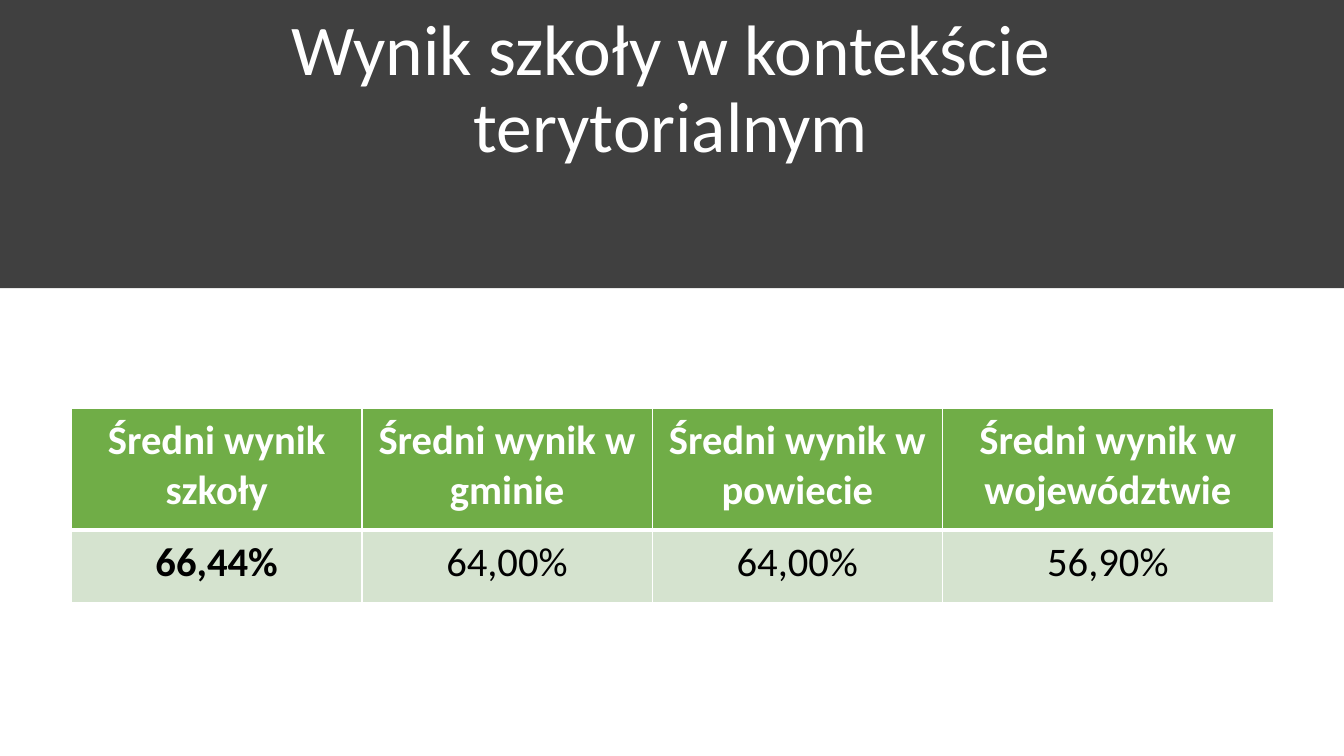
from lxml.etree import SubElement
from pptx import Presentation
from pptx.dml.color import RGBColor
from pptx.enum.shapes import MSO_SHAPE
from pptx.enum.text import MSO_ANCHOR, MSO_AUTO_SIZE, PP_ALIGN
from pptx.oxml.ns import qn
from pptx.util import Inches, Pt

COLOURS = {
    "band": "404040",
    "header": "70AD47",
    "result": "D5E3CF",
    "white": "FFFFFF",
    "black": "000000",
}
HEADINGS = [
    "Średni wynik szkoły",
    "Średni wynik w gminie",
    "Średni wynik w powiecie",
    "Średni wynik w województwie",
]
RESULTS = ["66,44%", "64,00%", "64,00%", "56,90%"]
COLUMN_WIDTHS = [2.88, 2.88, 2.88, 3.28]
ROW_HEIGHTS = [1.21, 0.72]


def colour(name):
    """Return the named colour of the palette."""
    return RGBColor.from_string(COLOURS[name])


def format_paragraph(paragraph, size, colour_name, bold=False):
    """Centre a paragraph and set its font."""
    paragraph.alignment = PP_ALIGN.CENTER
    font = paragraph.font
    font.name = "Calibri"
    font.size = Pt(size)
    font.bold = bold
    font.color.rgb = colour(colour_name)


def add_band(slide):
    """Place the dark band behind the title."""
    band = slide.shapes.add_shape(
        MSO_SHAPE.RECTANGLE, 0, 0, Inches(13.33), Inches(2.86)
    )
    band.shadow.inherit = False
    band.fill.solid()
    band.fill.fore_color.rgb = colour("band")
    band.line.fill.background()
    slide.shapes.element.insert(2, band.element)


def set_title(slide, text):
    """Fill and format the title placeholder."""
    title = slide.shapes.title
    title.left, title.top = Inches(0.77), Inches(0.4)
    title.width, title.height = Inches(11.77), Inches(1.32)
    frame = title.text_frame
    frame.text = text
    frame.word_wrap = True
    frame.auto_size = MSO_AUTO_SIZE.NONE
    frame.vertical_anchor = MSO_ANCHOR.BOTTOM
    frame.paragraphs[0].line_spacing = 0.9
    format_paragraph(frame.paragraphs[0], 51, "white")


def set_borders(cell, widths):
    """Draw white borders of the given widths around a cell."""
    properties = cell._tc.get_or_add_tcPr()
    for position, (side, width) in enumerate(widths.items()):
        line = SubElement(properties, qn(f"a:ln{side}"), w=str(Pt(width)))
        fill = SubElement(line, qn("a:solidFill"))
        SubElement(fill, qn("a:srgbClr"), val=COLOURS["white"])
        properties.insert(position, line)


def fill_cell(cell, text, fill_name, text_colour, bold, borders):
    """Write and format one table cell."""
    cell.text = text
    cell.margin_left = cell.margin_right = Inches(0.16)
    cell.margin_top = cell.margin_bottom = Inches(0.08)
    cell.fill.solid()
    cell.fill.fore_color.rgb = colour(fill_name)
    format_paragraph(cell.text_frame.paragraphs[0], 29, text_colour, bold)
    set_borders(cell, borders)


def add_results_table(slide):
    """Add the table of average results."""
    table = slide.shapes.add_table(
        len(ROW_HEIGHTS), len(COLUMN_WIDTHS), Inches(0.71), Inches(4.05),
        Inches(sum(COLUMN_WIDTHS)), Inches(sum(ROW_HEIGHTS)),
    ).table
    for row, height in zip(table.rows, ROW_HEIGHTS):
        row.height = Inches(height)
    header_borders = {"L": 1, "R": 1, "T": 1, "B": 3}
    result_borders = {"L": 1, "R": 1, "T": 3, "B": 1}
    for index, (heading, result) in enumerate(zip(HEADINGS, RESULTS)):
        table.columns[index].width = Inches(COLUMN_WIDTHS[index])
        fill_cell(table.cell(0, index), heading, "header", "white", True,
                  header_borders)
        fill_cell(table.cell(1, index), result, "result", "black", index == 0,
                  result_borders)


def main():
    """Build and save the slide."""
    presentation = Presentation()
    presentation.slide_width = Inches(13.33)
    presentation.slide_height = Inches(7.5)
    slide = presentation.slides.add_slide(presentation.slide_layouts[5])
    add_band(slide)
    set_title(slide, "Wynik szkoły w kontekście terytorialnym")
    add_results_table(slide)
    presentation.save("out.pptx")


if __name__ == "__main__":
    main()
